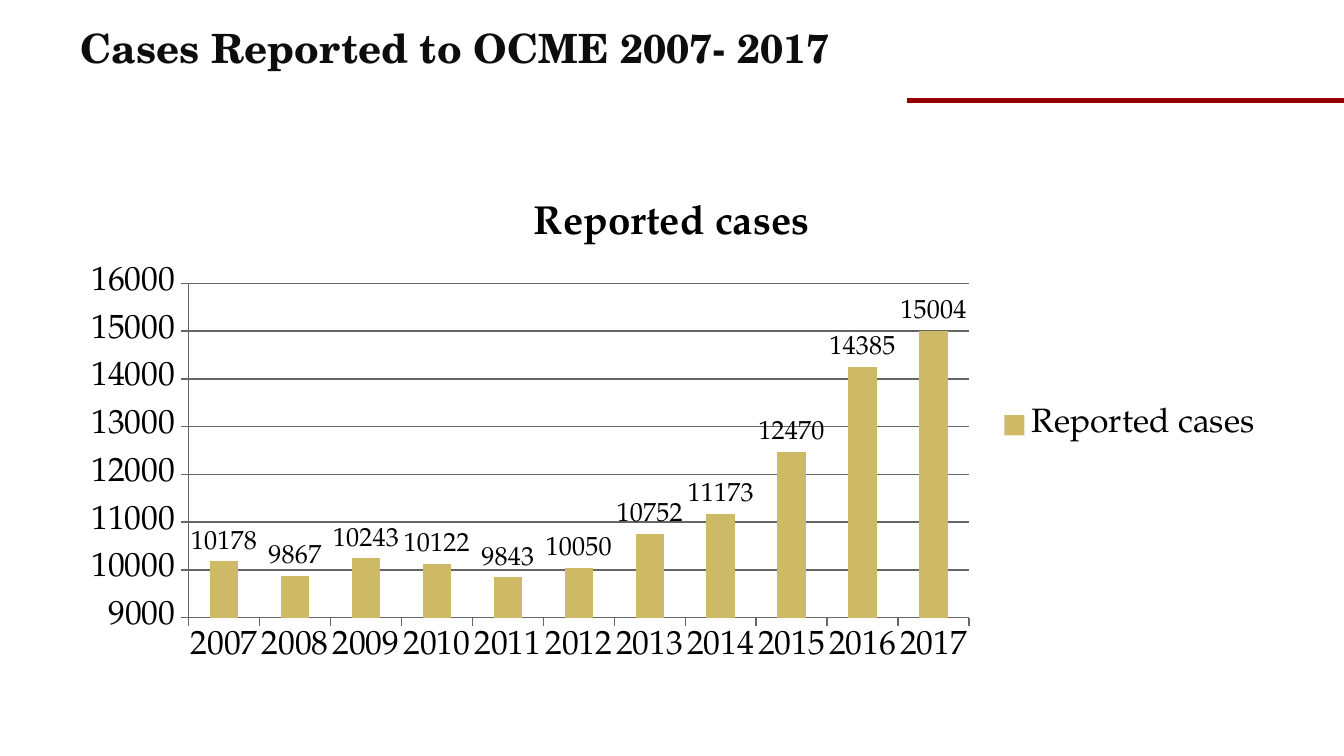
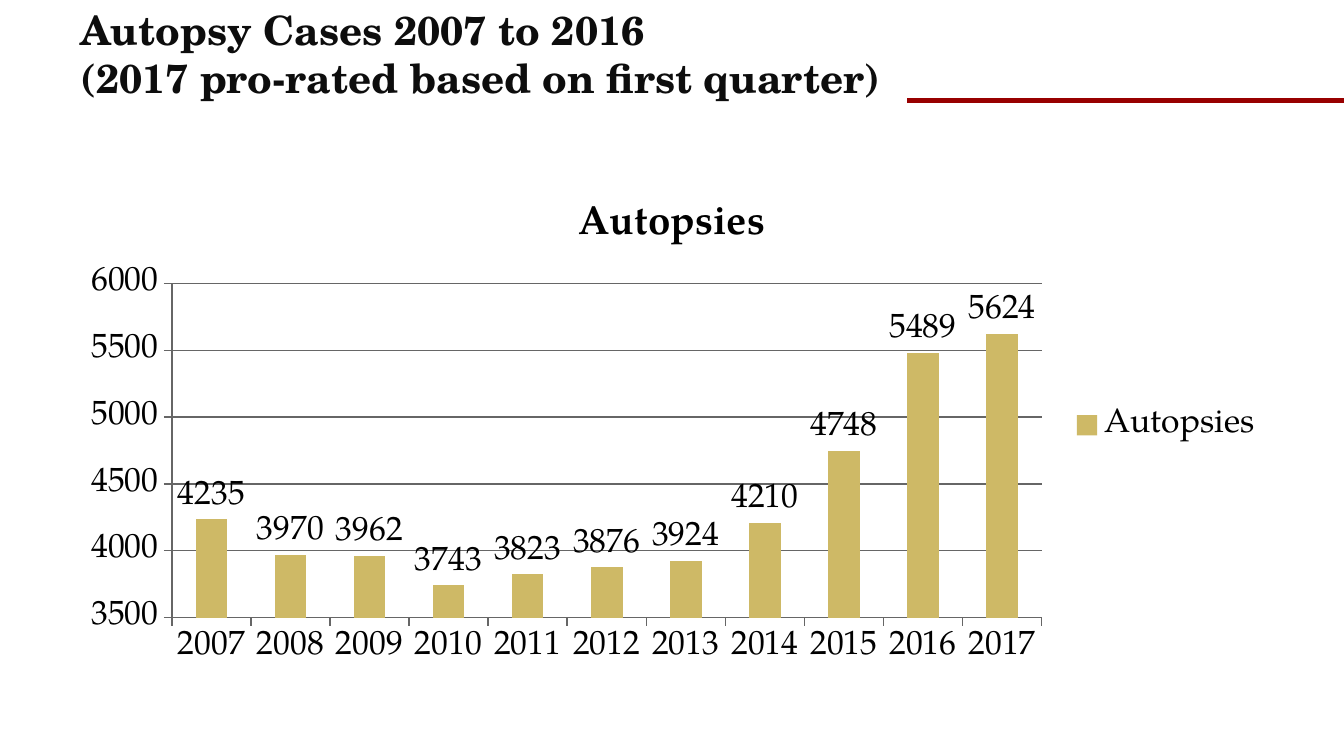
from dataclasses import dataclass

from lxml import etree
from pptx import Presentation
from pptx.chart.data import CategoryChartData as ChartData
from pptx.dml.color import RGBColor as Color
from pptx.enum.chart import XL_CHART_TYPE as ChartType
from pptx.enum.chart import XL_LABEL_POSITION as LabelPosition
from pptx.enum.chart import XL_LEGEND_POSITION as LegendPosition
from pptx.enum.chart import XL_TICK_MARK as TickMark
from pptx.enum.shapes import MSO_CONNECTOR as Connector
from pptx.enum.text import MSO_ANCHOR as Anchor
from pptx.oxml.ns import qn
from pptx.util import Cm, Pt


@dataclass(frozen=True)
class Theme:
    heading_font: str = "TeX Gyre Schola"
    body_font: str = "TeX Gyre Pagella"
    heading_color: str = "0D0D0D"
    text_color: str = "000000"
    bar_color: str = "CEB966"
    grid_color: str = "666666"
    rule_color: str = "980000"
    title_size: float = 21.6
    chart_size: float = 18
    small_size: float = 14
    rule_width: float = 2.25


@dataclass(frozen=True)
class Box:
    left: float
    top: float
    width: float
    height: float

    def lengths(self):
        return Cm(self.left), Cm(self.top), Cm(self.width), Cm(self.height)


THEME = Theme()
PAGE = Box(0, 0, 25.4, 14.29)
CHART_BOX = Box(1.27, 3.33, 22.86, 9.42)
RULE_BOX = Box(17.15, 1.9, 8.25, 0)
TITLE_BOTTOM = 2.97
YEARS = [str(year) for year in range(2007, 2018)]

SLIDES = [
    dict(
        title="Cases Reported to OCME 2007- 2017",
        title_top=0.43,
        series="Reported cases",
        values=[10178, 9867, 10243, 10122, 9843, 10050, 10752, 11173, 12470, 14250, 15004],
        relabelled={9: "14385"},
        scale=(9000, 16000, 1000),
        label_size=THEME.small_size,
    ),
    dict(
        title="Autopsy Cases 2007 to 2016\n(2017 pro-rated based on first quarter)",
        title_top=0.1,
        series="Autopsies",
        values=[4235, 3970, 3962, 3743, 3823, 3876, 3924, 4210, 4748, 5481, 5624],
        relabelled={9: "5489"},
        scale=(3500, 6000, 500),
        label_size=THEME.chart_size,
    ),
]


def set_font(font, name=THEME.body_font, size=THEME.chart_size, color=THEME.text_color, bold=False):
    font.name = name
    font.size = Pt(size)
    font.bold = bold
    font.color.rgb = Color.from_string(color)


def write(frame, text, **style):
    """Put text in a frame, with a line break at each newline."""
    para = frame.paragraphs[0]
    for number, line in enumerate(text.split("\n")):
        if number:
            para.add_line_break()
        span = para.add_run()
        span.text = line
        set_font(span.font, **style)


def add_title(page, box, text):
    frame = page.shapes.add_textbox(*box.lengths()).text_frame
    frame.word_wrap = True
    frame.vertical_anchor = Anchor.TOP
    frame.margin_top = frame.margin_bottom = 0
    write(frame, text, name=THEME.heading_font, size=THEME.title_size,
          color=THEME.heading_color, bold=True)


def add_rule(page, box):
    left, top, width, height = box.lengths()
    rule = page.shapes.add_connector(Connector.STRAIGHT, left, top, left + width, top + height)
    rule.line.color.rgb = Color.from_string(THEME.rule_color)
    rule.line.width = Pt(THEME.rule_width)
    etree.SubElement(rule._element.spPr, qn("a:effectLst"))


def style_line(line):
    line.color.rgb = Color.from_string(THEME.grid_color)
    line.width = Pt(0.75)


def add_column_chart(page, box, series, values, relabelled, scale, label_size):
    data = ChartData()
    data.categories = YEARS
    data.add_series(series, values)
    chart = page.shapes.add_chart(ChartType.COLUMN_CLUSTERED, *box.lengths(), data).chart
    set_font(chart.font)

    # Title and legend
    chart.has_title = True
    write(chart.chart_title.text_frame, series, size=THEME.title_size, bold=True)
    chart.chart_title.include_in_layout = False
    chart.has_legend = True
    chart.legend.position = LegendPosition.RIGHT
    chart.legend.include_in_layout = False

    # Axes
    for axis in (chart.category_axis, chart.value_axis):
        axis.major_tick_mark = TickMark.OUTSIDE
        axis.minor_tick_mark = TickMark.NONE
        style_line(axis.format.line)
    value_axis = chart.value_axis
    value_axis.minimum_scale, value_axis.maximum_scale, value_axis.major_unit = scale
    value_axis.has_major_gridlines = True
    style_line(value_axis.major_gridlines.format.line)

    # Columns and their labels
    plot = chart.plots[0]
    plot.gap_width = 150
    plot.vary_by_categories = False
    columns = plot.series[0]
    columns.format.fill.solid()
    columns.format.fill.fore_color.rgb = Color.from_string(THEME.bar_color)
    labels = columns.data_labels
    labels.show_value = True
    labels.position = LabelPosition.OUTSIDE_END
    set_font(labels.font, size=label_size)
    for index, text in relabelled.items():
        label = columns.points[index].data_label
        write(label.text_frame, text, size=label_size)
        label.position = LabelPosition.OUTSIDE_END


def add_chart_page(deck, title, title_top, **chart):
    page = deck.slides.add_slide(deck.slide_layouts[6])
    title_box = Box(CHART_BOX.left, title_top, CHART_BOX.width, TITLE_BOTTOM - title_top)
    add_title(page, title_box, title)
    add_column_chart(page, CHART_BOX, **chart)
    add_rule(page, RULE_BOX)


def main():
    deck = Presentation()
    deck.slide_width, deck.slide_height = Cm(PAGE.width), Cm(PAGE.height)
    for slide in SLIDES:
        add_chart_page(deck, **slide)
    deck.save("out.pptx")


if __name__ == "__main__":
    main()
